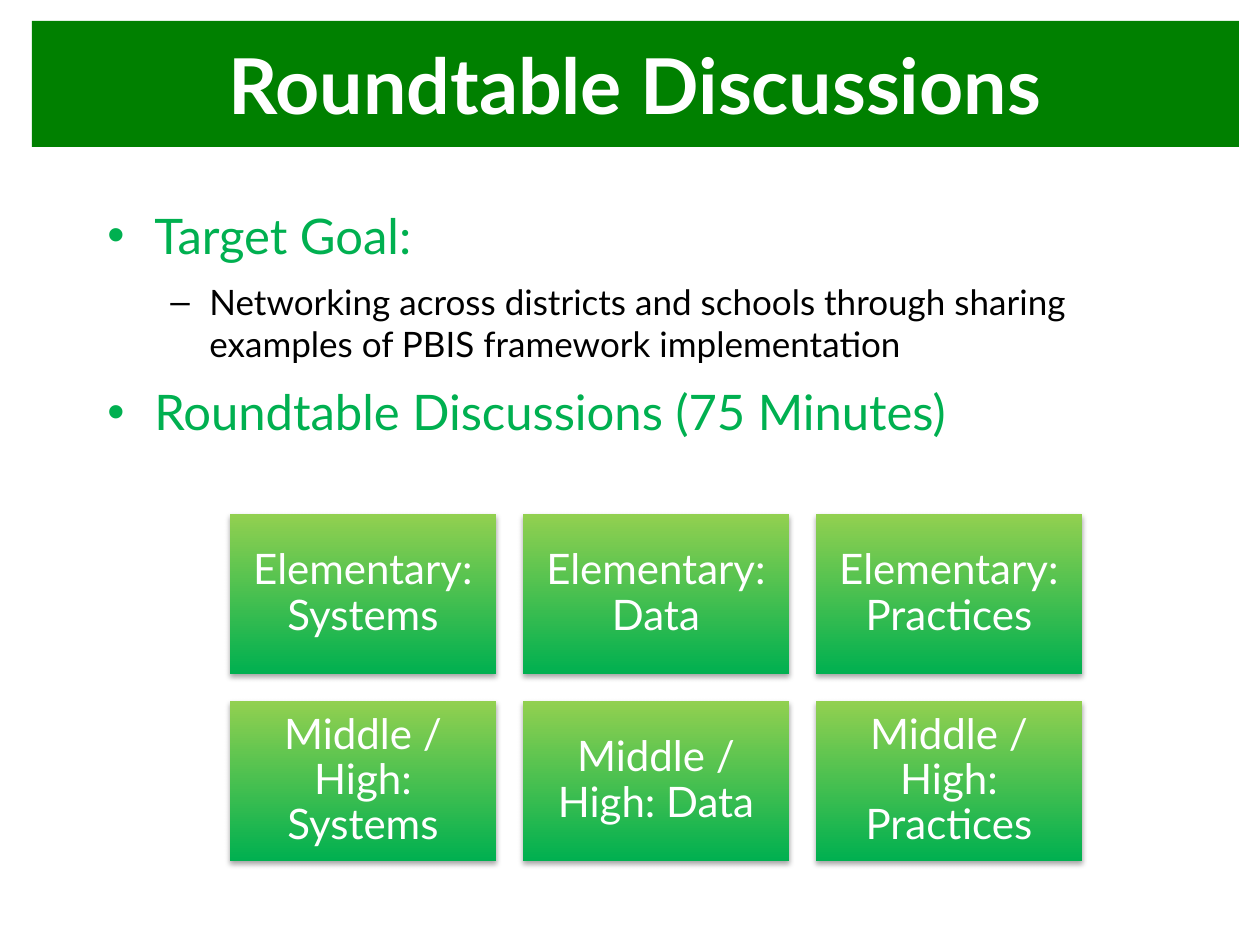
from dataclasses import dataclass

from lxml import etree
from pptx import Presentation
from pptx import util as u
from pptx.dml.color import RGBColor
from pptx.enum import shapes, text
from pptx.oxml import ns

PX = 914400 // 126  # EMU in one px


@dataclass(frozen=True)
class Theme:
    font: str = "Lato"
    white: str = "FFFFFF"
    black: str = "000000"
    band: str = "008000"
    green: str = "00B050"
    lime: str = "92D050"
    title: int = 44
    head: int = 28
    tile: int = 24
    sub: int = 20


T = Theme()


def px(*vals):
    return [u.Emu(val * PX) for val in vals]


def rgb(code):
    return RGBColor.from_string(code)


def style(para, size, color, bold=False):
    for run in para.runs:
        font = run.font
        font.name, font.size, font.bold = T.font, u.Pt(size), bold
        font.color.rgb = rgb(color)


def add_box(slide, area, words, size, bold=False):
    """Borderless rectangle with centred white text."""
    box = slide.shapes.add_shape(shapes.MSO_SHAPE.RECTANGLE, *px(*area))
    box.shadow.inherit = False
    box.line.fill.background()
    frame = box.text_frame
    frame.word_wrap = True
    frame.vertical_anchor = text.MSO_ANCHOR.MIDDLE
    frame.text = words
    para = frame.paragraphs[0]
    para.alignment = text.PP_ALIGN.CENTER
    style(para, size, T.white, bold)
    return box


def add_title(slide, area, words):
    box = add_box(slide, area, words, T.title, bold=True)
    box.fill.solid()
    box.fill.fore_color.rgb = rgb(T.band)


def add_shade(shape):
    """Soft shadow just below the shape."""
    effects = shape._element.spPr.find(ns.qn("a:effectLst"))
    shade = etree.SubElement(effects, ns.qn("a:outerShdw"), blurRad="40000",
                             dist="23000", dir="5400000", rotWithShape="0")
    color = etree.SubElement(shade, ns.qn("a:srgbClr"), val=T.black)
    etree.SubElement(color, ns.qn("a:alpha"), val="35000")


def add_tile(slide, area, words):
    box = add_box(slide, area, words, T.tile)
    box.fill.gradient()
    box.fill.gradient_angle = 90
    for stop, color in zip(box.fill.gradient_stops, (T.green, T.lime)):
        stop.color.rgb = rgb(color)
    add_shade(box)
    frame = box.text_frame
    frame.margin_left = frame.margin_right = u.Inches(0.1)
    frame.margin_top = frame.margin_bottom = u.Inches(0.1)
    frame.paragraphs[0].line_spacing = 0.9


def add_grid(slide, left, top, wide, high, gap, rows):
    for row, names in enumerate(rows):
        for col, name in enumerate(names):
            spot = (left + col * (wide + gap), top + row * (high + gap))
            add_tile(slide, (*spot, wide, high), name)


def add_list(slide, area, items):
    """Bulleted text; each item is a level and its words."""
    looks = [("•", 47, 47, T.head, T.green), ("–", 102, 39, T.sub, T.black)]
    frame = slide.shapes.add_textbox(*px(*area)).text_frame
    frame.word_wrap = True
    for num, (level, words) in enumerate(items):
        mark, left, hang, size, color = looks[level]
        para = frame.add_paragraph() if num else frame.paragraphs[0]
        para.text = words
        para.level = level
        para.space_before = u.Pt(0.2 * size if num else 0)
        para.space_after = u.Pt(0.2 * size)
        props = para._p.get_or_add_pPr()
        props.set("marL", str(left * PX))
        props.set("indent", str(-hang * PX))
        etree.SubElement(props, ns.qn("a:buFont"), typeface="Arial")
        etree.SubElement(props, ns.qn("a:buChar"), char=mark)
        style(para, size, color)


def main():
    deck = Presentation()
    deck.slide_width, deck.slide_height = u.Inches(10), u.Inches(7.5)
    slide = deck.slides.add_slide(deck.slide_layouts[6])

    # Goal and agenda
    add_list(slide, (95, 199, 1071, 262), [
        (0, "Target Goal:"),
        (1, "Networking across districts and schools through sharing "
            "examples of PBIS framework implementation"),
        (0, "Roundtable Discussions (75 Minutes)"),
    ])

    # Title band
    add_title(slide, (32, 21, 1207, 126), "Roundtable Discussions")

    # One tile for each school level and topic
    topics = ("Systems", "Data", "Practices")
    rows = [[f"{school}: {topic}" for topic in topics]
            for school in ("Elementary", "Middle / High")]
    add_grid(slide, 230, 514, 266, 160, 27, rows)

    deck.save("out.pptx")


if __name__ == "__main__":
    main()
